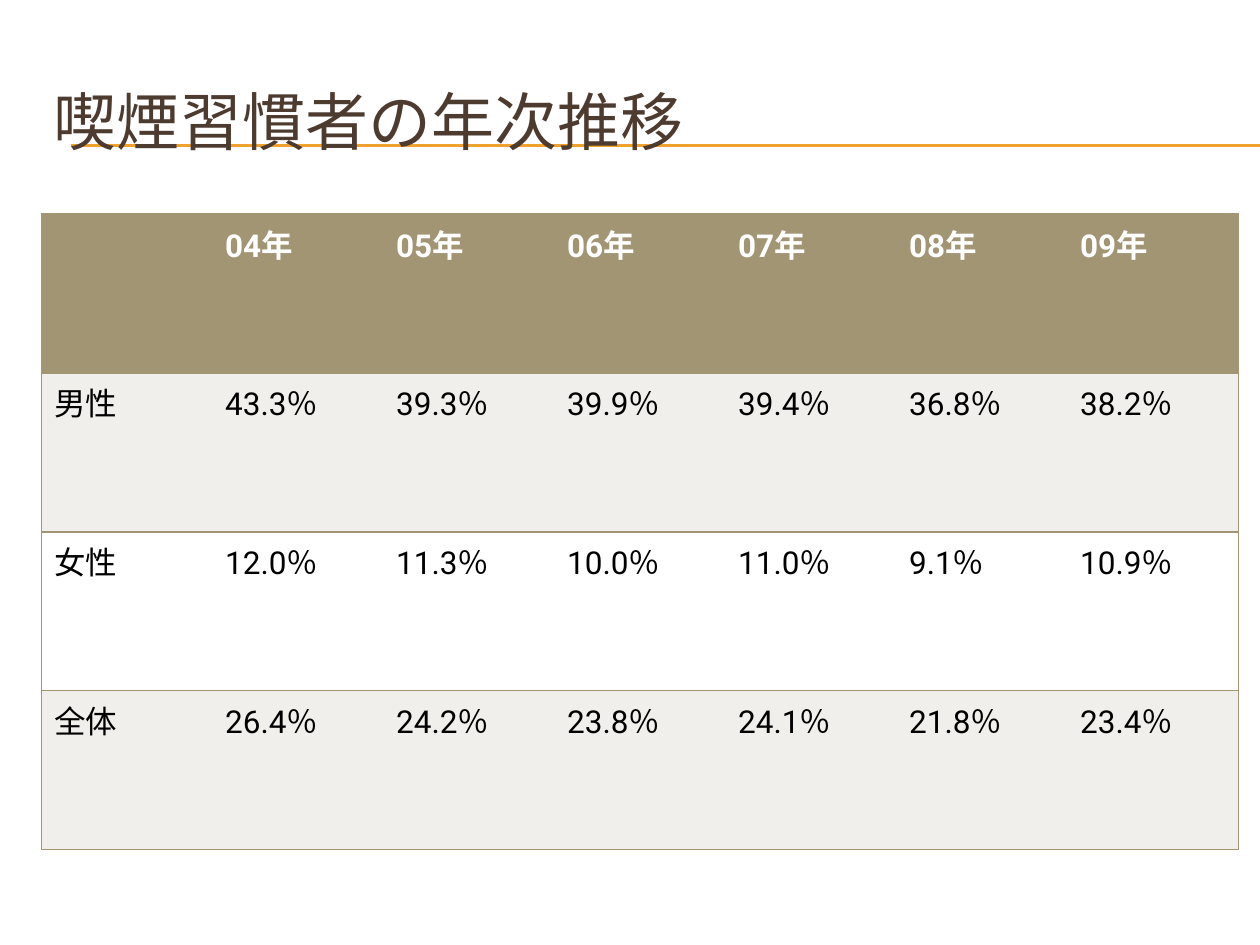
"""Build a slide with a table of smoking rates by year."""
from lxml import etree
from pptx import Presentation
from pptx.dml.color import RGBColor
from pptx.enum.shapes import MSO_CONNECTOR
from pptx.enum.text import MSO_ANCHOR
from pptx.oxml.ns import qn
from pptx.util import Pt

STRAIGHT = MSO_CONNECTOR.STRAIGHT
MIDDLE = MSO_ANCHOR.MIDDLE
ORANGE = RGBColor(0xF0, 0xA2, 0x2E)
BROWN = RGBColor(0x4E, 0x3B, 0x30)
KHAKI = RGBColor(0xA1, 0x95, 0x74)
PALE = RGBColor(0xF0, 0xEF, 0xEB)
WHITE = RGBColor(0xFF, 0xFF, 0xFF)
BLACK = RGBColor(0, 0, 0)

PAGE_WIDTH, PAGE_HEIGHT = 720, 540
LEFT, WIDTH = 23.76, 684
RATES = [
    ["", "04年", "05年", "06年", "07年", "08年", "09年"],
    ["男性", "43.3％", "39.3％", "39.9％", "39.4％", "36.8％", "38.2％"],
    ["女性", "12.0％", "11.3％", "10.0％", "11.0％", "9.1％", "10.9％"],
    ["全体", "26.4％", "24.2％", "23.8％", "24.1％", "21.8％", "23.4％"],
]


class SlideBuilder:
    def __init__(self, page, font="Roboto"):
        self.page = page
        self.font = font

    def style(self, paragraph, size, color, bold=False):
        paragraph.font.name = self.font
        paragraph.font.size = Pt(size)
        paragraph.font.bold = bold
        paragraph.font.color.rgb = color

    def rule(self, left, right, top):
        line = self.page.shapes.add_connector(STRAIGHT, Pt(left), Pt(top), Pt(right), Pt(top))
        line.line.color.rgb = ORANGE
        line.line.width = Pt(0.75)
        etree.SubElement(line._element.spPr, qn("a:effectLst"))

    def title(self, text, left, top, width, height):
        box = self.page.shapes.add_textbox(Pt(left), Pt(top), Pt(width), Pt(height))
        frame = box.text_frame
        frame.word_wrap = True
        frame.vertical_anchor = MIDDLE
        frame.text = text
        self.style(frame.paragraphs[0], 36, BROWN)

    def border(self, cell, side, color=None):
        properties = cell._tc.get_or_add_tcPr()
        line = etree.SubElement(properties, qn(f"a:ln{side}"), w=str(Pt(1)))
        if color is None:
            etree.SubElement(line, qn("a:noFill"))
        else:
            fill = etree.SubElement(line, qn("a:solidFill"))
            etree.SubElement(fill, qn("a:srgbClr"), val=str(color))

    def table(self, rows, left, top, width, height):
        last = len(rows[0]) - 1
        table = self.page.shapes.add_table(
            len(rows), last + 1, Pt(left), Pt(top), Pt(width), Pt(height)
        ).table
        for row_index, row in enumerate(rows):
            header = row_index == 0
            fill = KHAKI if header else PALE if row_index % 2 else WHITE
            for column, text in enumerate(row):
                cell = table.cell(row_index, column)
                cell.text = text
                self.style(cell.text_frame.paragraphs[0], 18, WHITE if header else BLACK, header)
                self.border(cell, "L", KHAKI if column == 0 else None)
                self.border(cell, "R", KHAKI if column == last else None)
                self.border(cell, "T", KHAKI)
                self.border(cell, "B", KHAKI)
                cell.fill.solid()
                cell.fill.fore_color.rgb = fill


def main():
    deck = Presentation()
    deck.slide_width, deck.slide_height = Pt(PAGE_WIDTH), Pt(PAGE_HEIGHT)
    builder = SlideBuilder(deck.slides.add_slide(deck.slide_layouts[6]))
    for top in (82.8, 83.5):
        builder.rule(40.5, PAGE_WIDTH, top)
    builder.title("喫煙習慣者の年次推移", LEFT, 36, WIDTH, 66)
    builder.table(RATES, LEFT, 122.4, WIDTH, 363)
    deck.save("out.pptx")


if __name__ == "__main__":
    main()
